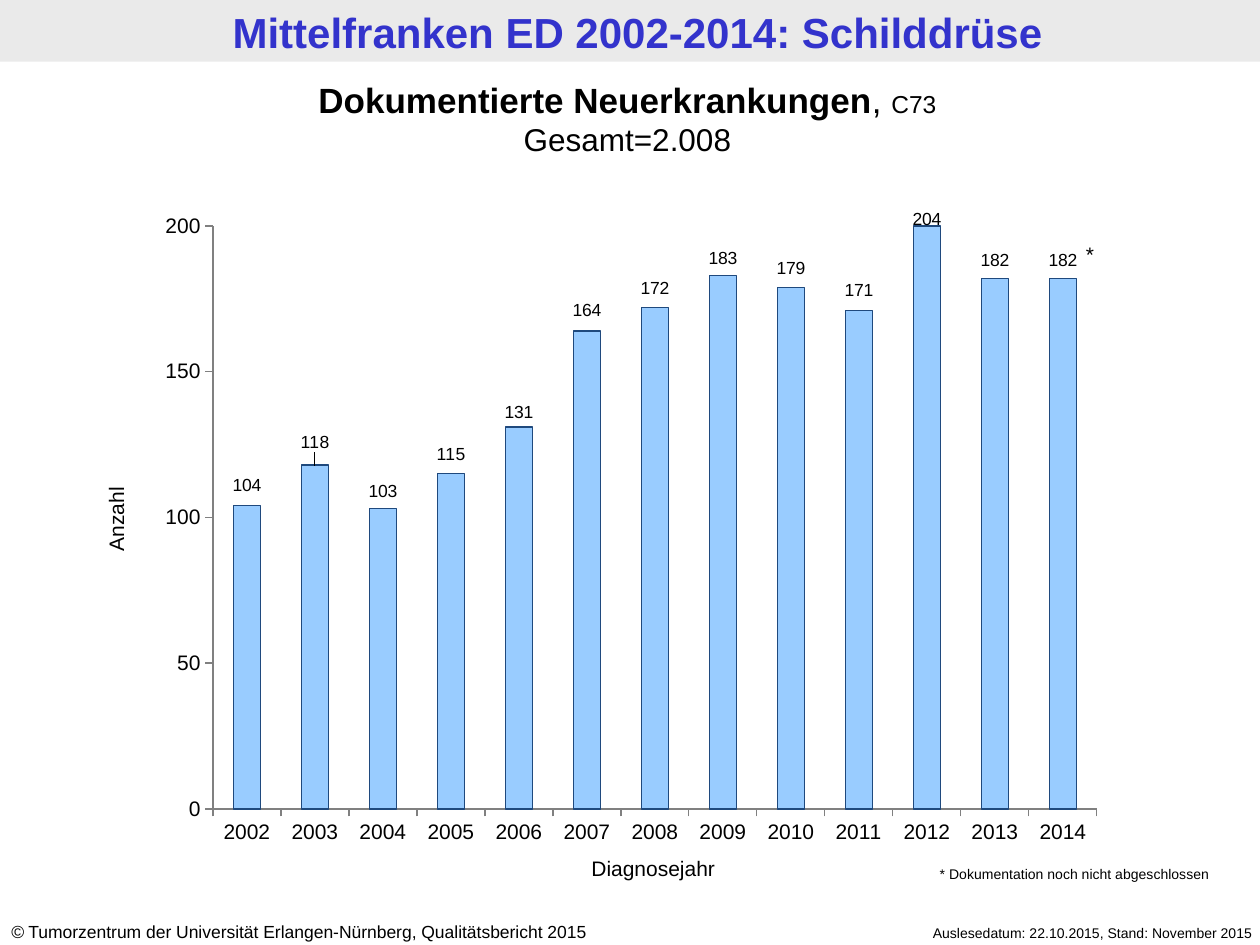
from lxml.etree import SubElement
from pptx import Presentation
from pptx.chart.data import CategoryChartData
from pptx.dml.color import RGBColor
from pptx.enum.chart import XL_CHART_TYPE as ChartType
from pptx.enum.chart import XL_LABEL_POSITION as LabelPosition
from pptx.enum.chart import XL_TICK_MARK as TickMark
from pptx.enum.shapes import MSO_SHAPE as Shape
from pptx.enum.text import MSO_ANCHOR as Anchor
from pptx.enum.text import MSO_AUTO_SIZE as AutoSize
from pptx.enum.text import PP_ALIGN as Align
from pptx.oxml import parse_xml
from pptx.oxml.ns import nsdecls, qn
from pptx.util import Inches, Pt

BLACK = RGBColor(0x00, 0x00, 0x00)
BAND_GREY = RGBColor(0xEA, 0xEA, 0xEA)
AXIS_GREY = RGBColor(0x80, 0x80, 0x80)
TITLE_BLUE = RGBColor(0x33, 0x33, 0xCC)
BAR_BLUE = RGBColor(0x99, 0xCC, 0xFF)
BAR_EDGE = RGBColor(0x1F, 0x49, 0x7D)

COLUMNS, ROWS = 100, 75
YEARS = range(2002, 2015)
CASES = [104, 118, 103, 115, 131, 164, 172, 183, 179, 171, 204, 182, 182]
# Height of each label above its bar, in rows
LABEL_LIFTS = [1.8, 2, 1.5, 1.7, 1.3, 1.8, 1.7, 1.5, 1.6, 1.8, 0.7, 1.6, 1.6]
LABEL_INSET = 1


def manual_layout(**settings):
    """Layout element for a piece of the chart, settings in schema order."""
    layout = parse_xml(f"<c:layout {nsdecls('c')}><c:manualLayout/></c:layout>")
    for name, value in settings.items():
        SubElement(layout[0], qn(f"c:{name}")).set("val", str(value))
    return layout


class ReportPage:
    font_name = "Arial"

    def __init__(self, deck):
        self.deck = deck
        self.page = deck.slides.add_slide(deck.slide_layouts[5])
        self.shapes = self.page.shapes

    def area(self, left, top, width, height):
        x_unit = self.deck.slide_width / COLUMNS
        y_unit = self.deck.slide_height / ROWS
        return [round(left * x_unit), round(top * y_unit),
                round(width * x_unit), round(height * y_unit)]

    def style(self, font, size, color=BLACK, bold=False):
        font.name, font.size, font.bold = self.font_name, Pt(size), bold
        font.color.rgb = color

    def band(self, *place):
        box = self.shapes.add_shape(Shape.RECTANGLE, *self.area(*place))
        box.shadow.inherit = False
        box.fill.solid()
        box.fill.fore_color.rgb = BAND_GREY
        box.line.fill.background()
        self.shapes.title.element.addprevious(box.element)

    def title(self, text, *place):
        box = self.shapes.title
        box.left, box.top, box.width, box.height = self.area(*place)
        frame = box.text_frame
        frame.auto_size = AutoSize.NONE
        frame.vertical_anchor = Anchor.MIDDLE
        frame.margin_left = frame.margin_right = Inches(0.09)
        frame.margin_top = frame.margin_bottom = Inches(0.04)
        para = frame.paragraphs[0]
        para.text, para.alignment = text, Align.CENTER
        self.style(para.font, 24, TITLE_BLUE, True)

    def text(self, lines, *place, size=12, align=Align.LEFT, rotation=0):
        """Each line is a list of (text, font settings) spans."""
        box = self.shapes.add_textbox(*self.area(*place))
        box.rotation = rotation
        frame = box.text_frame
        frame.word_wrap = True
        for index, spans in enumerate(lines):
            para = frame.add_paragraph() if index else frame.paragraphs[0]
            para.alignment = align
            self.style(para.font, size)
            for words, settings in spans:
                span = para.add_run()
                span.text = words
                for name, value in settings.items():
                    setattr(span.font, name, value)

    def column_chart(self, *place):
        data = CategoryChartData()
        data.categories = [str(year) for year in YEARS]
        data.add_series("Series 1", CASES)
        chart = self.shapes.add_chart(
            ChartType.COLUMN_STACKED, *self.area(*place), data).chart
        chart.has_legend = chart.has_title = False
        self.style(chart.font, 12)

        # Axes
        for axis in (chart.category_axis, chart.value_axis):
            axis.has_major_gridlines = False
            axis.major_tick_mark = TickMark.OUTSIDE
            axis.minor_tick_mark = TickMark.NONE
            axis.format.line.color.rgb = AXIS_GREY
            axis.format.line.width = Pt(0.75)
        axis = chart.value_axis
        axis.minimum_scale, axis.maximum_scale, axis.major_unit = 0, 200, 50

        # Plot area and bars
        plot = chart.plots[0]
        plot.gap_width, plot.overlap = 150, 100
        plot.vary_by_categories = False
        plot_area = chart._chartSpace.find(f".//{qn('c:plotArea')}")
        for old in plot_area.findall(qn("c:layout")):
            plot_area.remove(old)
        plot_area.insert(0, manual_layout(
            layoutTarget="inner", xMode="edge", yMode="edge",
            x=0.07, y=0.03, w=0.91, h=0.9))
        series = plot.series[0]
        series.format.fill.solid()
        series.format.fill.fore_color.rgb = BAR_BLUE
        series.format.line.color.rgb = BAR_EDGE
        series.format.line.width = Pt(0.75)

        # Value labels raised above the bars
        labels = series.data_labels
        labels.show_value = True
        self.style(labels.font, 10)
        for index in range(len(CASES)):
            label = series.points[index].data_label
            self.style(label.font, 10)
            label.position = LabelPosition.INSIDE_END
        for element, lift in zip(plot_area.iter(qn("c:dLbl")), LABEL_LIFTS):
            shift = -(lift + LABEL_INSET) / place[3]
            element.insert(1, manual_layout(x=0, y=round(shift, 3)))


def main():
    deck = Presentation()
    deck.slide_width, deck.slide_height = Inches(10), Inches(7.5)
    report = ReportPage(deck)

    # Header
    report.band(0, 0, COLUMNS, 4.9)
    report.title("Mittelfranken ED 2002-2014: Schilddrüse", 0.6, 0.1, 100, 4.9)

    # Footer
    report.text([[("Auslesedatum: 22.10.2015, Stand: November 2015", {})]],
                66.5, 72.9, 33.9, 2.4, size=8, align=Align.RIGHT)
    report.text([[("©", {"italic": True}),
                  (" Tumorzentrum der Universität Erlangen-Nürnberg, "
                   "Qualitätsbericht 2015", {})]],
                -0.1, 72.6, 52.4, 2.7, size=10)

    # Chart with heading, axis titles and footnote
    report.column_chart(11.5, 16.4, 77.1, 51.4)
    report.text([[("Dokumentierte Neuerkrankungen",
                   {"bold": True, "size": Pt(20)}),
                  (", ", {"size": Pt(20)}), ("C73", {"size": Pt(14)})],
                 [("Gesamt=2.008", {})]],
                -0.4, 5.7, 100.4, 7.4, size=18, align=Align.CENTER)
    report.text([[("Diagnosejahr", {})]], 40.6, 67.4, 22.5, 3,
                align=Align.CENTER)
    report.text([[("Anzahl", {})]], 3.1, 39.7, 12.2, 3,
                align=Align.CENTER, rotation=270)
    report.text([[("*", {})]], 83.9, 18.7, 3.9, 3, align=Align.RIGHT)
    report.text([[("* Dokumentation noch nicht abgeschlossen", {})]],
                73.6, 68.2, 24.8, 2.4, size=8)

    deck.save("out.pptx")


if __name__ == "__main__":
    main()
